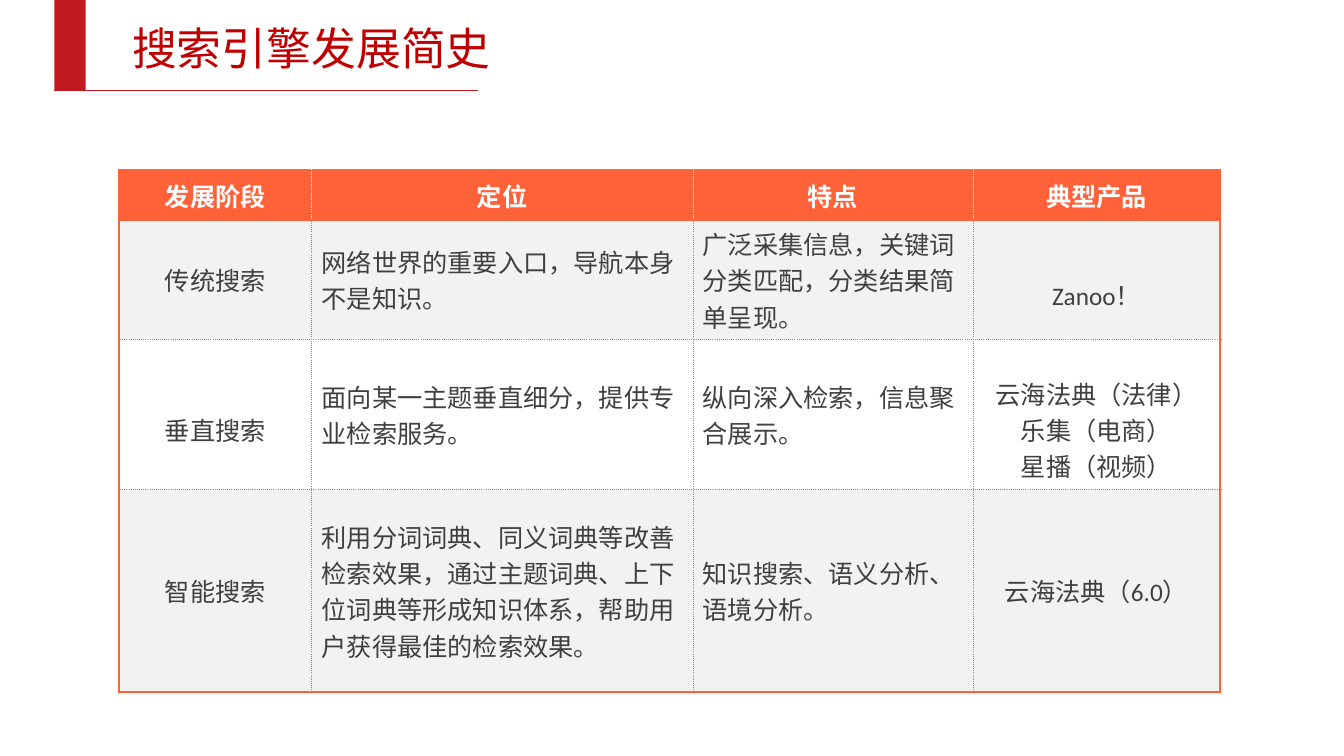
"""Build the slide on the history of search engines."""
from dataclasses import dataclass

from lxml import etree
from pptx import Presentation
from pptx.dml.color import RGBColor
from pptx.enum.shapes import MSO_CONNECTOR, MSO_SHAPE
from pptx.enum.text import MSO_ANCHOR, MSO_AUTO_SIZE, PP_ALIGN
from pptx.oxml.ns import qn
from pptx.slide import Slide
from pptx.table import _Cell
from pptx.text.text import _Paragraph
from pptx.util import Inches, Pt

MIDDLE = MSO_ANCHOR.MIDDLE
NO_AUTOFIT = MSO_AUTO_SIZE.NONE
LEFT, CENTER = PP_ALIGN.LEFT, PP_ALIGN.CENTER
RECTANGLE = MSO_SHAPE.RECTANGLE
STRAIGHT = MSO_CONNECTOR.STRAIGHT
COLORS = {
    "orange": "FF6238",
    "white": "FFFFFF",
    "band": "F2F2F2",
    "text": "404040",
    "accent": "C01920",
    "title": "C00000",
}
CJK_FONT = "Noto Sans CJK SC"
TABLE_FONT = "Calibri"
COLUMN_WIDTHS = (1.91, 3.78, 2.78, 2.45)
HEADINGS = ("发展阶段", "定位", "特点", "典型产品")
HEADER_HEIGHT = 0.49
TOP_MARGIN, LOWERED_MARGIN = 0.05, 0.35


@dataclass(frozen=True)
class Stage:
    """One stage of search and the columns whose text sits lower."""
    name: str
    position: str
    feature: str
    products: tuple[str, ...]
    height: float
    lowered: tuple[int, ...] = ()


@dataclass(frozen=True)
class Border:
    """Colour, width in points and dash of one cell edge."""
    color: str
    width: float
    dash: str


@dataclass(frozen=True)
class TextStyle:
    """Look of a run of text."""
    font: str
    size: float
    color: str
    bold: bool = False


FRAME = Border("orange", 1.5, "solid")
INNER = Border("orange", 0.25, "sysDot")
HEADER_INNER = Border("white", 0.25, "sysDot")
TITLE_STYLE = TextStyle(CJK_FONT, 32, "title")
HEADER_STYLE = TextStyle(TABLE_FONT, 18, "white", True)
BODY_STYLE = TextStyle(TABLE_FONT, 18, "text")
STAGES = (
    Stage("传统搜索", "网络世界的重要入口，导航本身不是知识。",
          "广泛采集信息，关键词分类匹配，分类结果简单呈现。",
          ("Zanoo！",), 1.18, (3,)),
    Stage("垂直搜索", "面向某一主题垂直细分，提供专业检索服务。",
          "纵向深入检索，信息聚合展示。",
          ("云海法典（法律）", "乐集（电商）", "星播（视频）"), 1.49, (0, 3)),
    Stage("智能搜索",
          "利用分词词典、同义词典等改善检索效果，通过主题词典、上下位词典等形成知识体系，"
          "帮助用户获得最佳的检索效果。",
          "知识搜索、语义分析、语境分析。", ("云海法典（6.0）",), 2.01),
)


def rgb(name: str) -> RGBColor:
    """Return a named colour."""
    return RGBColor.from_string(COLORS[name])


def add_text(para: _Paragraph, text: str, style: TextStyle, align: PP_ALIGN) -> None:
    """Add one styled run to a paragraph."""
    para.alignment = align
    span = para.add_run()
    span.text = text
    span.font.name = style.font
    span.font.size = Pt(style.size)
    span.font.bold = style.bold
    span.font.color.rgb = rgb(style.color)
    east_asian = etree.SubElement(span.font._element, qn("a:ea"))
    east_asian.set("typeface", CJK_FONT)


def set_borders(cell: _Cell, borders: dict[str, Border]) -> None:
    """Draw the cell edges, given in the order L, R, T, B."""
    properties = cell._tc.get_or_add_tcPr()
    for index, (side, border) in enumerate(borders.items()):
        line = etree.Element(qn(f"a:ln{side}"), w=str(Pt(border.width)))
        fill = etree.SubElement(line, qn("a:solidFill"))
        etree.SubElement(fill, qn("a:srgbClr"), val=COLORS[border.color])
        etree.SubElement(line, qn("a:prstDash"), val=border.dash)
        properties.insert(index, line)


def fill_cell(cell: _Cell, lines: tuple[str, ...], style: TextStyle,
              align: PP_ALIGN, fill: str, top_margin: float) -> None:
    """Write the lines of a cell and colour its background."""
    cell.vertical_anchor = MIDDLE
    cell.margin_top = Inches(top_margin)
    cell.fill.solid()
    cell.fill.fore_color.rgb = rgb(fill)
    for index, text in enumerate(lines):
        paragraphs = cell.text_frame
        para = paragraphs.add_paragraph() if index else paragraphs.paragraphs[0]
        add_text(para, text, style, align)


def add_stage_table(page: Slide) -> None:
    """Add the table that compares the stages."""
    heights = (HEADER_HEIGHT, *(stage.height for stage in STAGES))
    last_row, last_column = len(STAGES), len(HEADINGS) - 1
    table = page.shapes.add_table(
        len(heights), len(HEADINGS), Inches(1.18), Inches(1.69),
        Inches(sum(COLUMN_WIDTHS)), Inches(sum(heights))).table
    table.horz_banding = False
    for column, width in zip(table.columns, COLUMN_WIDTHS):
        column.width = Inches(width)
    for row, height in zip(table.rows, heights):
        row.height = Inches(height)
    for column, heading in enumerate(HEADINGS):
        fill_cell(table.cell(0, column), (heading,), HEADER_STYLE, CENTER,
                  "orange", TOP_MARGIN)
    for row, stage in enumerate(STAGES, 1):
        contents = ((stage.name,), (stage.position,), (stage.feature,), stage.products)
        for column, lines in enumerate(contents):
            fill_cell(table.cell(row, column), lines, BODY_STYLE,
                      CENTER if column in (0, last_column) else LEFT,
                      "band" if row % 2 else "white",
                      LOWERED_MARGIN if column in stage.lowered else TOP_MARGIN)
    for row in range(last_row + 1):
        inner = INNER if row else HEADER_INNER
        for column in range(last_column + 1):
            set_borders(table.cell(row, column), {
                "L": FRAME if column == 0 else inner,
                "R": FRAME if column == last_column else inner,
                "T": FRAME if row <= 1 else INNER,
                "B": FRAME if row in (0, last_row) else INNER,
            })


def add_heading(page: Slide) -> None:
    """Add the title with its red bar and rule."""
    bar = page.shapes.add_shape(RECTANGLE, Inches(0.54), Inches(0), Inches(0.31), Inches(0.9))
    bar.shadow.inherit = False
    bar.fill.solid()
    bar.fill.fore_color.rgb = rgb("accent")
    bar.line.fill.background()
    rule = page.shapes.add_connector(STRAIGHT, Inches(0.54), Inches(0.9), Inches(4.74), Inches(0.9))
    rule.line.color.rgb = rgb("accent")
    rule.line.width = Pt(0.5)
    etree.SubElement(rule._element.spPr, qn("a:effectLst"))
    title = page.shapes.title
    title.left, title.top = Inches(1.21), Inches(0.15)
    title.width, title.height = Inches(4.05), Inches(0.64)
    title.text_frame.auto_size = NO_AUTOFIT
    title.text_frame.word_wrap = True
    title.text_frame.vertical_anchor = MIDDLE
    add_text(title.text_frame.paragraphs[0], "搜索引擎发展简史", TITLE_STYLE, LEFT)


def main() -> None:
    """Build and save the deck."""
    deck = Presentation()
    deck.slide_width, deck.slide_height = Inches(13.33), Inches(7.5)
    page = deck.slides.add_slide(deck.slide_layouts.get_by_name("Title Only"))
    add_stage_table(page)
    add_heading(page)
    deck.save("out.pptx")


if __name__ == "__main__":
    main()
